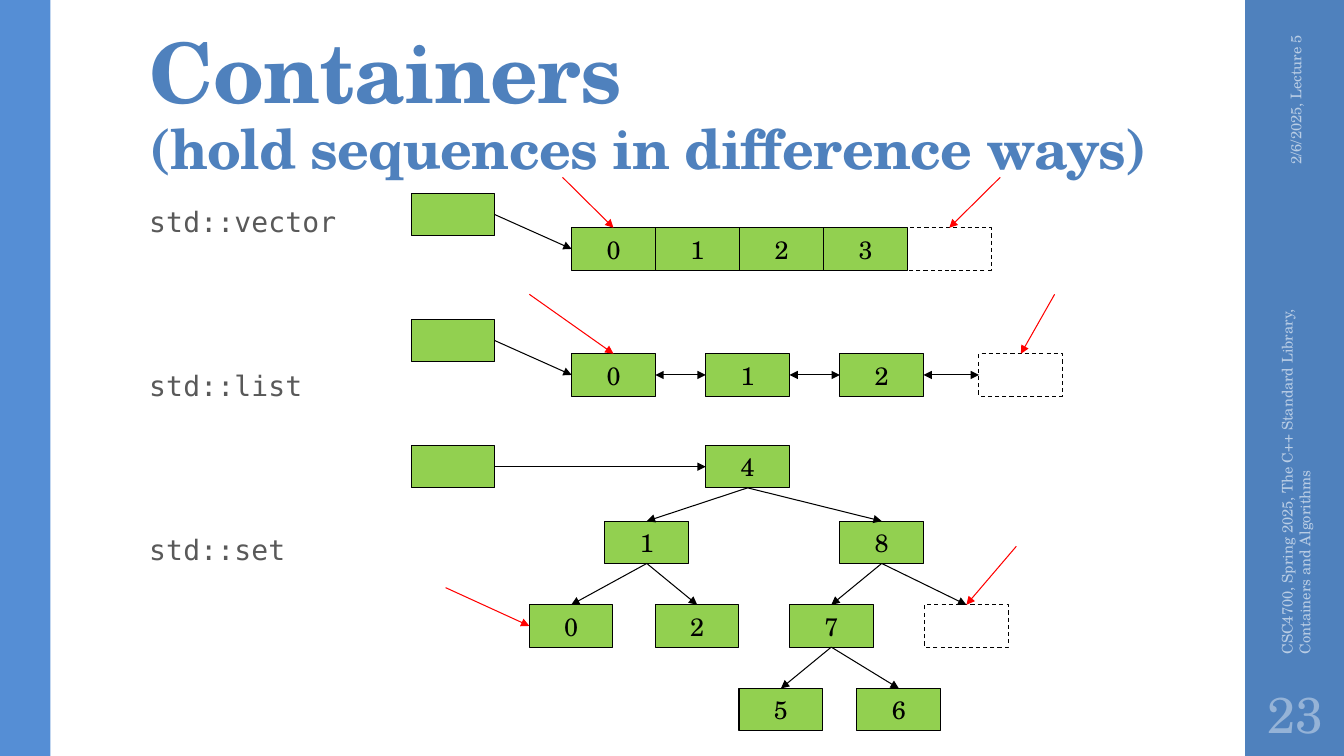
from dataclasses import dataclass

from lxml import etree
from pptx import Presentation
from pptx import util as u
from pptx.dml.color import RGBColor
from pptx.enum import dml, shapes, text
from pptx.oxml import ns


@dataclass(frozen=True)
class Theme:
    serif: str = "TeX Gyre Schola"
    mono: str = "DejaVu Sans Mono"
    band: str = "4F81BD"
    strip: str = "558ED5"
    body: str = "595959"
    foot: str = "B9CDE5"
    page: str = "95B3D7"
    node: str = "92D050"
    ink: str = "000000"
    mark: str = "FF0000"
    head_size: float = 59.4
    sub_size: float = 39.6
    body_size: float = 20
    node_size: float = 18
    foot_size: float = 10.5
    page_size: float = 36
    line: float = 0.75


T = Theme()
TOP, LEFT, BOTTOM, RIGHT = range(4)  # connection sites of a rectangle
NODE_W, NODE_H = 0.83, 0.42
HEAD_X, FIRST_X = 4.08, 5.67


def rgb(code):
    return RGBColor.from_string(code)


def apply(item, form):
    for name, value in form.items():
        setattr(item, name, value)


def place(item, x, y, w, h):
    apply(item, {"left": u.Inches(x), "top": u.Inches(y),
                 "width": u.Inches(w), "height": u.Inches(h)})


def write(para, words, size, color, font=T.serif, bold=False, gap=0):
    run = para.add_run()
    run.text = words
    apply(run.font, {"name": font, "size": u.Pt(size), "bold": bold})
    run.font.color.rgb = rgb(color)
    if gap:
        run.font._element.set("spc", str(gap))


def bar(slide, x, w, color):
    rect = slide.shapes.add_shape(
        shapes.MSO_SHAPE.RECTANGLE, u.Inches(x), 0, u.Inches(w), u.Inches(7.5))
    rect.shadow.inherit = False
    rect.fill.solid()
    rect.fill.fore_color.rgb = rgb(color)
    rect.line.fill.background()


def note(slide, area, words, size, color, align, turn=0, inset=0.1):
    box = slide.shapes.add_textbox(*map(u.Inches, area))
    box.rotation = turn
    apply(box.text_frame, {
        "word_wrap": True, "vertical_anchor": text.MSO_ANCHOR.MIDDLE,
        "margin_left": u.Inches(inset), "margin_right": u.Inches(inset)})
    para = box.text_frame.paragraphs[0]
    para.alignment = align
    write(para, words, size, color)


def title(slide, head, sub):
    shape = slide.shapes.title
    place(shape, 1.38, 0.32, 10.6, 1.53)
    apply(shape.text_frame, {
        "word_wrap": True, "auto_size": text.MSO_AUTO_SIZE.NONE,
        "vertical_anchor": text.MSO_ANCHOR.BOTTOM,
        "margin_top": u.Inches(0.03), "margin_bottom": u.Inches(0.05)})
    para = shape.text_frame.paragraphs[0]
    apply(para, {"alignment": text.PP_ALIGN.LEFT, "line_spacing": 0.9})
    write(para, head, T.head_size, T.band, bold=True, gap=-50)
    para.add_line_break()
    write(para, sub, T.sub_size, T.band, bold=True, gap=-50)


def names(slide, items):
    shape = slide.placeholders[1]
    place(shape, 1.38, 2, 9.4, 4.76)
    frame = shape.text_frame
    apply(frame, {"word_wrap": True, "auto_size": text.MSO_AUTO_SIZE.NONE,
                  "vertical_anchor": text.MSO_ANCHOR.TOP})
    for i, item in enumerate(items):
        para = frame.add_paragraph() if i else frame.paragraphs[0]
        apply(para, {"line_spacing": 0.95, "space_after": u.Pt(2),
                     "space_before": u.Pt(92.4 if i else 0)})
        props = para._p.get_or_add_pPr()
        props.set("marL", "0")
        props.set("indent", "0")
        etree.SubElement(props, ns.qn("a:buNone"))
        write(para, item, T.body_size, T.body, font=T.mono, gap=10)


def node(slide, x, y, label="", end=False):
    """Draw a filled cell, or a dashed one for the end position."""
    box = slide.shapes.add_shape(
        shapes.MSO_SHAPE.RECTANGLE, *map(u.Inches, (x, y, NODE_W, NODE_H)))
    box.shadow.inherit = False
    box.line.color.rgb = rgb(T.ink)
    box.line.width = u.Pt(T.line)
    if end:
        box.fill.background()
        box.line.dash_style = dml.MSO_LINE.DASH
    else:
        box.fill.solid()
        box.fill.fore_color.rgb = rgb(T.node)
    if label:
        apply(box.text_frame, {"word_wrap": False,
                               "vertical_anchor": text.MSO_ANCHOR.MIDDLE})
        para = box.text_frame.paragraphs[0]
        para.alignment = text.PP_ALIGN.CENTER
        write(para, label, T.node_size, T.ink)
    return box


def arrow(slide, goal, site, start=(0, 0), source=None, exit=RIGHT,
          color=T.ink, both=False):
    x, y = map(u.Inches, start)
    line = slide.shapes.add_connector(shapes.MSO_CONNECTOR.STRAIGHT, x, y, x, y)
    if source is not None:
        line.begin_connect(source, exit)
    line.end_connect(goal, site)
    line.line.color.rgb = rgb(color)
    line.line.width = u.Pt(T.line)
    stroke = line.line._get_or_add_ln()
    for tag in ("a:headEnd", "a:tailEnd") if both else ("a:tailEnd",):
        etree.SubElement(stroke, ns.qn(tag), type="triangle")
    etree.SubElement(line._element.spPr, ns.qn("a:effectLst"))


def point(slide, start, goal, site=TOP):
    arrow(slide, goal, site, start=start, color=T.mark)


def vector(slide):
    y = 2.26
    head = node(slide, HEAD_X, 1.92)
    end = node(slide, 9, y, end=True)
    cells = [node(slide, FIRST_X + i * 2.5 / 3, y, str(i)) for i in range(4)]
    arrow(slide, cells[0], LEFT, source=head)
    point(slide, (5.58, 1.76), cells[0])
    point(slide, (9.92, 1.76), end)


def chain(slide):
    y = 3.51
    head = node(slide, HEAD_X, 3.17)
    cells = [node(slide, FIRST_X + i * 1.33, y, str(i)) for i in range(3)]
    cells.append(node(slide, 9.71, y, end=True))
    for a, b in zip(cells, cells[1:]):
        arrow(slide, b, LEFT, source=a, both=True)
    arrow(slide, cells[0], LEFT, source=head)
    point(slide, (5.25, 2.92), cells[0])
    point(slide, (10.46, 2.92), cells[-1])


def tree(slide):
    rows = {4.42: {"4": 7}, 5.17: {"1": 6, "8": 8.33},
            6: {"0": 5.25, "2": 6.5, "7": 7.83},
            6.83: {"5": 7.33, "6": 8.5}}
    head = node(slide, HEAD_X, 4.42)
    cells = {key: node(slide, x, y, key)
             for y, row in rows.items() for key, x in row.items()}
    cells["end"] = node(slide, 9.17, 6, end=True)
    kids = {"4": ("1", "8"), "1": ("0", "2"), "8": ("7", "end"), "7": ("5", "6")}
    for key, pair in kids.items():
        for kid in pair:
            arrow(slide, cells[kid], TOP, source=cells[key], exit=BOTTOM)
    arrow(slide, cells["4"], LEFT, source=head)
    point(slide, (4.42, 5.83), cells["0"], LEFT)
    point(slide, (10.08, 5.42), cells["end"])


def main():
    deck = Presentation()
    apply(deck, {"slide_width": u.Inches(13.33), "slide_height": u.Inches(7.5)})
    slide = deck.slides.add_slide(deck.slide_layouts[1])

    # Side bands and their text
    bar(slide, 12.35, 1, T.band)
    bar(slide, 0, 0.5, T.strip)
    align = text.PP_ALIGN
    note(slide, (11.81, 1.09, 2.08, 0.4), "2/6/2025, Lecture 5",
         T.foot_size, T.foot, align.RIGHT, turn=270)
    note(slide, (10.89, 4.43, 3.92, 0.4),
         "CSC4700, Spring 2025, The C++ Standard Library, Containers and Algorithms",
         T.foot_size, T.foot, align.LEFT, turn=270)
    note(slide, (12.35, 6.75, 1, 0.65), "23",
         T.page_size, T.page, align.CENTER, inset=0.05)

    # Title and container names
    title(slide, "Containers", "(hold sequences in difference ways)")
    names(slide, ["std::vector", "std::list", "std::set"])

    # Diagrams
    vector(slide)
    chain(slide)
    tree(slide)
    deck.save("out.pptx")


if __name__ == "__main__":
    main()
